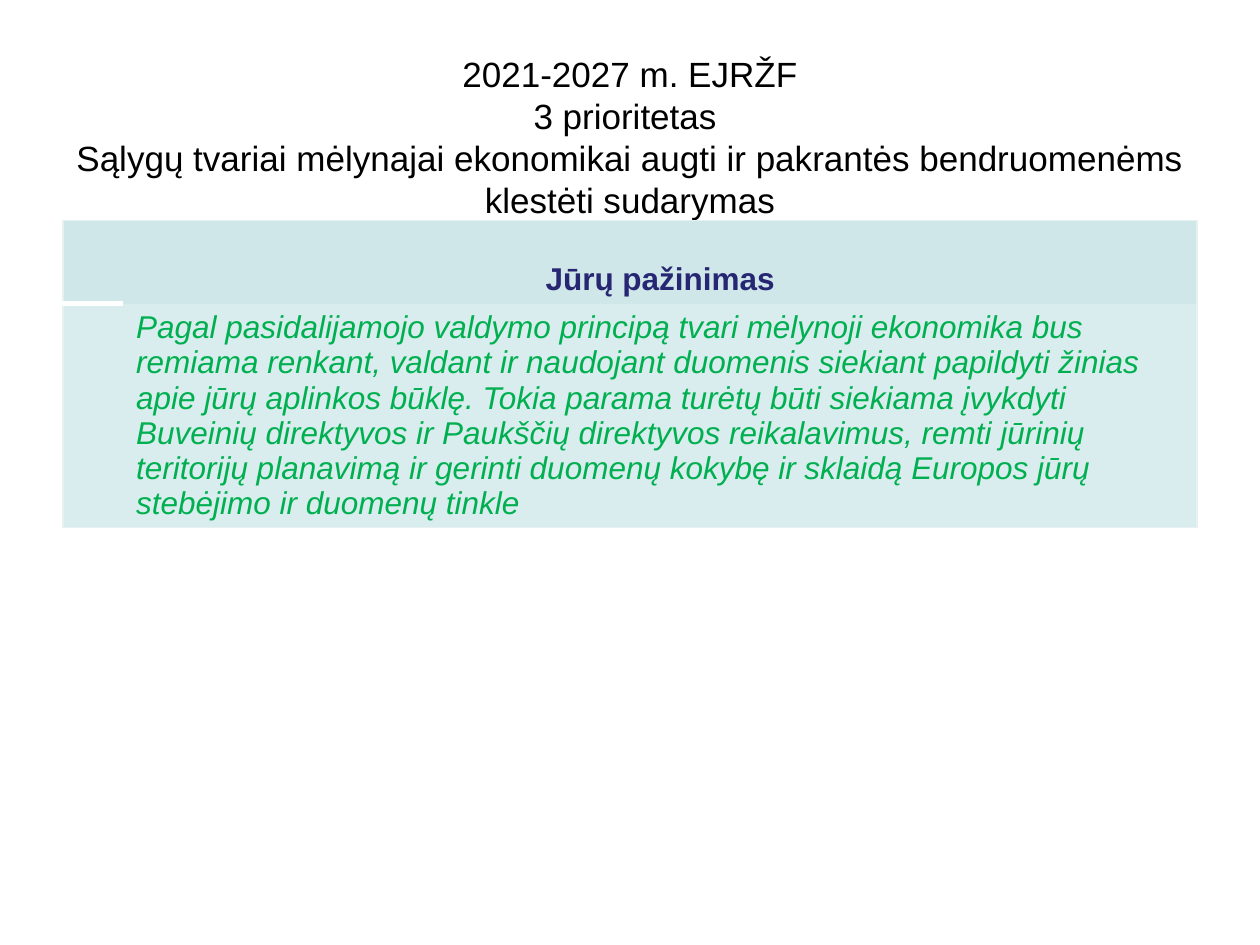
from copy import deepcopy
from dataclasses import dataclass

from pptx import Presentation
from pptx.dml.color import RGBColor
from pptx.enum.text import MSO_ANCHOR, MSO_AUTO_SIZE, PP_ALIGN
from pptx.oxml.ns import qn
from pptx.util import Inches, Pt
from lxml.etree import SubElement


@dataclass(frozen=True)
class Theme:
    font: str = "Arial"
    title: str = "000000"
    heading: str = "262673"
    body: str = "00B050"
    head_fill: str = "CFE7E9"
    body_fill: str = "D9ECEE"
    edge: str = "E8F1F2"
    rule: str = "FFFFFF"
    title_size: int = 20
    text_size: int = 18
    edge_width: float = 0.75
    rule_width: float = 3


@dataclass(frozen=True)
class Cell:
    text: str
    fill: str
    color: str
    edges: str
    bold: bool = False
    italic: bool = False
    align: PP_ALIGN = PP_ALIGN.LEFT
    anchor: MSO_ANCHOR = MSO_ANCHOR.TOP
    ruled: bool = False


THEME = Theme()
NO_STYLE = "{2D5ABB26-0587-4C30-8999-92F81FD0307C}"
COLS = (0.48, 8.52)
ROWS = (0.66, 1.78)

TITLE = ("2021-2027 m. EJRŽF\v3 prioritetas \v"
         "Sąlygų tvariai mėlynajai ekonomikai augti ir pakrantės "
         "bendruomenėms klestėti sudarymas")
BODY = ("Pagal pasidalijamojo valdymo principą tvari mėlynoji ekonomika bus "
        "remiama renkant, valdant ir naudojant duomenis siekiant papildyti "
        "žinias apie jūrų aplinkos būklę. Tokia parama turėtų būti siekiama "
        "įvykdyti Buveinių direktyvos ir Paukščių direktyvos reikalavimus, "
        "remti jūrinių teritorijų planavimą ir gerinti duomenų kokybę ir "
        "sklaidą Europos jūrų stebėjimo ir duomenų tinkle")

CELLS = (
    (Cell("", THEME.head_fill, THEME.heading, "LT", ruled=True),
     Cell("Jūrų pažinimas", THEME.head_fill, THEME.heading, "RT", bold=True,
          align=PP_ALIGN.CENTER, anchor=MSO_ANCHOR.BOTTOM)),
    (Cell("", THEME.body_fill, THEME.body, "LB"),
     Cell(BODY, THEME.body_fill, THEME.body, "RB", italic=True)),
)


def write(tf, text: str, *, size: float, color: str, bold: bool = False,
          italic: bool = False, align: PP_ALIGN = PP_ALIGN.LEFT) -> None:
    """Fill a text frame with one formatted paragraph."""
    p = tf.paragraphs[0]
    p.text = text
    p.alignment = align
    for r in p.runs:
        r.font.name = THEME.font
        r.font.size = Pt(size)
        r.font.bold = bold
        r.font.italic = italic
        r.font.color.rgb = RGBColor.from_string(color)
    # Line breaks take the format of the text
    for br in p._p.findall(qn("a:br")):
        br.append(deepcopy(p.runs[0]._r.rPr))


def add_border(cell, side: str, color: str, width: float) -> None:
    ln = SubElement(cell._tc.get_or_add_tcPr(), qn(f"a:ln{side}"),
                    w=str(Pt(width)))
    SubElement(SubElement(ln, qn("a:solidFill")), qn("a:srgbClr"), val=color)


def draw_cell(cell, item: Cell) -> None:
    cell.vertical_anchor = item.anchor
    write(cell.text_frame, item.text, size=THEME.text_size, color=item.color,
          bold=item.bold, italic=item.italic, align=item.align)
    # Borders come before the fill in the cell properties
    for side in item.edges:
        add_border(cell, side, THEME.edge, THEME.edge_width)
    if item.ruled:
        add_border(cell, "B", THEME.rule, THEME.rule_width)
    cell.fill.solid()
    cell.fill.fore_color.rgb = RGBColor.from_string(item.fill)


def main() -> None:
    prs = Presentation()
    prs.slide_width, prs.slide_height = Inches(10), Inches(7.5)
    s = prs.slides.add_slide(prs.slide_layouts[5])

    # Title
    sp = s.shapes.title
    sp.left, sp.top = Inches(0.5), Inches(0.3)
    sp.width, sp.height = Inches(9), Inches(1.56)
    tf = sp.text_frame
    tf.word_wrap = True
    tf.auto_size = MSO_AUTO_SIZE.NONE
    tf.vertical_anchor = MSO_ANCHOR.MIDDLE
    write(tf, TITLE, size=THEME.title_size, color=THEME.title,
          align=PP_ALIGN.CENTER)

    # Table
    frame = s.shapes.add_table(len(ROWS), len(COLS), Inches(0.5), Inches(1.75),
                               Inches(sum(COLS)), Inches(sum(ROWS)))
    table = frame.table
    table.horz_banding = False
    table._tbl.tblPr.find(qn("a:tableStyleId")).text = NO_STYLE
    for col, width in zip(table.columns, COLS):
        col.width = Inches(width)
    for row, height, items in zip(table.rows, ROWS, CELLS):
        row.height = Inches(height)
        for cell, item in zip(row.cells, items):
            draw_cell(cell, item)

    prs.save("out.pptx")


if __name__ == "__main__":
    main()
